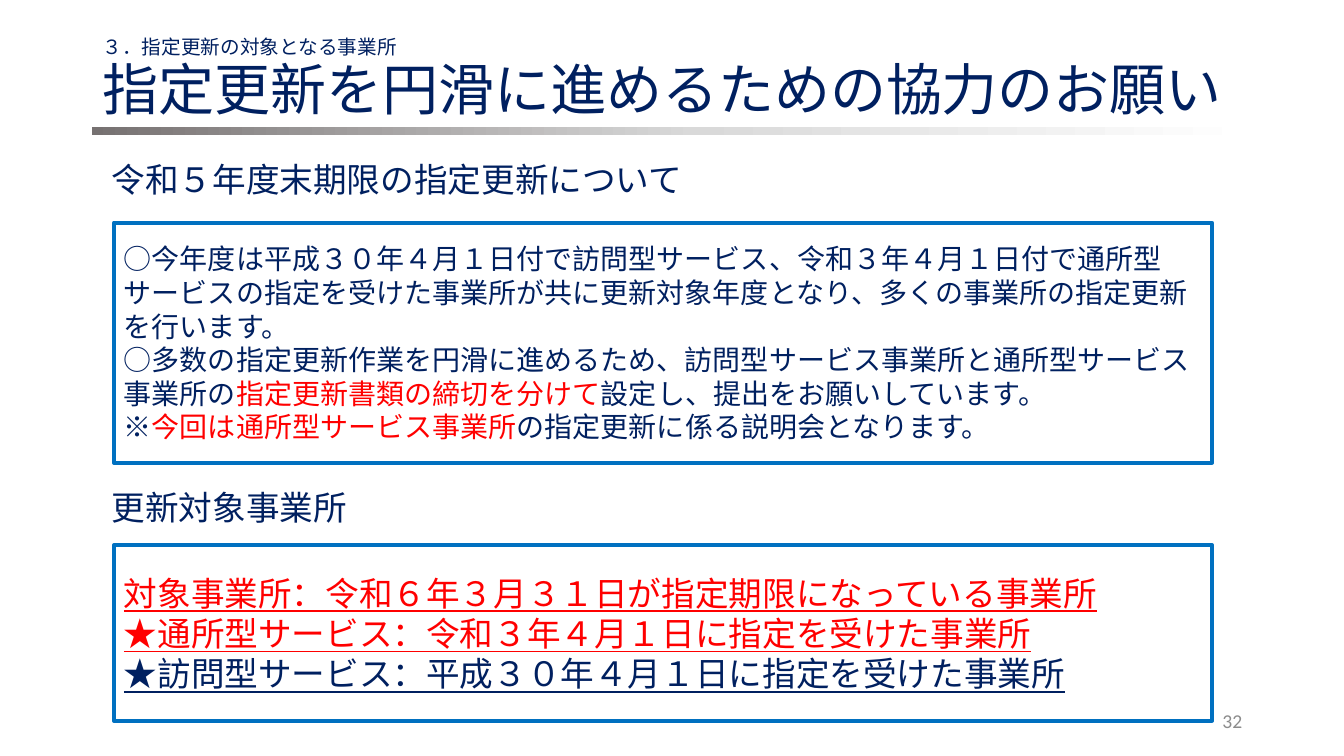
from copy import deepcopy
from dataclasses import dataclass

from lxml import etree
from pptx import Presentation
from pptx.dml.color import RGBColor
from pptx.enum.shapes import MSO_SHAPE
from pptx.enum.text import MSO_ANCHOR, MSO_AUTO_SIZE, PP_ALIGN
from pptx.oxml.ns import qn
from pptx.util import Inches, Pt

RECT, BAR = MSO_SHAPE.RECTANGLE, MSO_SHAPE.FLOWCHART_PROCESS
TOP, MIDDLE = MSO_ANCHOR.TOP, MSO_ANCHOR.MIDDLE
LEFT, RIGHT = PP_ALIGN.LEFT, PP_ALIGN.RIGHT
GROW = MSO_AUTO_SIZE.SHAPE_TO_FIT_TEXT

COLORS = {
    "navy": "002060",
    "red": "FF0000",
    "blue": "0070C0",
    "gray": "8C8C8C",
    "bar_dark": "767171",
    "bar_light": "D9D9D9",
    "white": "FFFFFF",
}
JP = "Noto Sans CJK JP"

Line = list[tuple[str, str]]


@dataclass
class Label:
    text: str
    left: float
    top: float
    width: float
    height: float
    size: int
    color: str = "navy"
    font: str = JP
    align: PP_ALIGN = LEFT
    spacing: float | None = None
    grow: bool = False


@dataclass
class Panel:
    top: float
    height: float
    size: int
    underline: bool
    lines: list[Line]


LABELS = [
    Label("指定更新を円滑に進めるための協力のお願い", 0.92, 0.4, 11.5, 1.03, 40, spacing=0.9),
    Label("３．指定更新の対象となる事業所", 0.92, 0.29, 11.5, 0.38, 14, spacing=0.9),
    Label("令和５年度末期限の指定更新について", 1.01, 1.53, 10.41, 0.5, 24, grow=True),
    Label("更新対象事業所", 1.01, 4.78, 10.41, 0.5, 24, grow=True),
    Label("32", 9.42, 6.95, 3, 0.4, 14, "gray", "Calibri", RIGHT),
]

PANELS = [
    Panel(2.21, 2.38, 20, False, [
        [("○今年度は平成３０年４月１日付で訪問型サービス、令和３年４月１日付で通所型"
          "サービスの指定を受けた事業所が共に更新対象年度となり、多くの事業所の指定更新"
          "を行います。", "navy")],
        [("○多数の指定更新作業を円滑に進めるため、訪問型サービス事業所と通所型サービス"
          "事業所の", "navy"),
         ("指定更新書類の締切を分けて", "red"),
         ("設定し、提出をお願いしています。", "navy")],
        [("※", "navy"),
         ("今回は通所型サービス事業所", "red"),
         ("の指定更新に係る説明会となります。", "navy")],
    ]),
    Panel(5.41, 1.74, 24, True, [
        [("対象事業所：令和６年３月３１日が指定期限になっている事業所", "red")],
        [("★通所型サービス：令和３年４月１日に指定を受けた事業所", "red")],
        [("★訪問型サービス：平成３０年４月１日に指定を受けた事業所", "navy")],
    ]),
]

BAR_STOPS = [(0, "bar_dark"), (0.52, "bar_light"), (1, "white")]


def rgb(name: str) -> RGBColor:
    return RGBColor.from_string(COLORS[name])


def write_line(p, line: Line, size: int, font: str = JP) -> None:
    p.font.size = Pt(size)
    p.font.name = font
    etree.SubElement(p.font._element, qn("a:ea"), typeface=font)
    same_color = len({color for _, color in line}) == 1
    if same_color:
        p.font.color.rgb = rgb(line[0][1])
    for text, color in line:
        r = p.add_run()
        r.text = text
        if not same_color:
            r.font.color.rgb = rgb(color)


def add_label(slide, label: Label) -> None:
    s = slide.shapes.add_textbox(
        Inches(label.left), Inches(label.top), Inches(label.width), Inches(label.height))
    tf = s.text_frame
    tf.word_wrap = True
    tf.vertical_anchor = TOP if label.grow else MIDDLE
    if label.grow:
        tf.auto_size = GROW
    p = tf.paragraphs[0]
    p.alignment = label.align
    if label.spacing:
        p.line_spacing = label.spacing
    write_line(p, [(label.text, label.color)], label.size, label.font)


def add_panel(slide, panel: Panel) -> None:
    s = slide.shapes.add_shape(
        RECT, Inches(1.13), Inches(panel.top), Inches(10.89), Inches(panel.height))
    s.shadow.inherit = False
    s.fill.background()
    s.line.color.rgb = rgb("blue")
    s.line.width = Pt(3)
    tf = s.text_frame
    tf.word_wrap = True
    tf.vertical_anchor = MIDDLE
    for i, line in enumerate(panel.lines):
        p = tf.add_paragraph() if i else tf.paragraphs[0]
        p.alignment = LEFT
        if panel.underline:
            p.font.underline = True
        write_line(p, line, panel.size)


def add_title_bar(slide) -> None:
    s = slide.shapes.add_shape(BAR, Inches(0.91), Inches(1.26), Inches(11.5), Inches(0.08))
    s.shadow.inherit = False
    s.line.fill.background()
    s.fill.gradient()
    s.fill.gradient_angle = 0
    stops = s._element.spPr.find(f"{qn('a:gradFill')}/{qn('a:gsLst')}")
    stops.append(deepcopy(stops[0]))
    for stop, (position, color) in zip(s.fill.gradient_stops, BAR_STOPS):
        stop.position = position
        stop.color.rgb = rgb(color)


def main() -> None:
    prs = Presentation()
    prs.slide_width, prs.slide_height = Inches(13.33), Inches(7.5)
    slide = prs.slides.add_slide(prs.slide_layouts[6])
    add_title_bar(slide)
    for label in LABELS:
        add_label(slide, label)
    for panel in PANELS:
        add_panel(slide, panel)
    prs.save("out.pptx")


if __name__ == "__main__":
    main()
